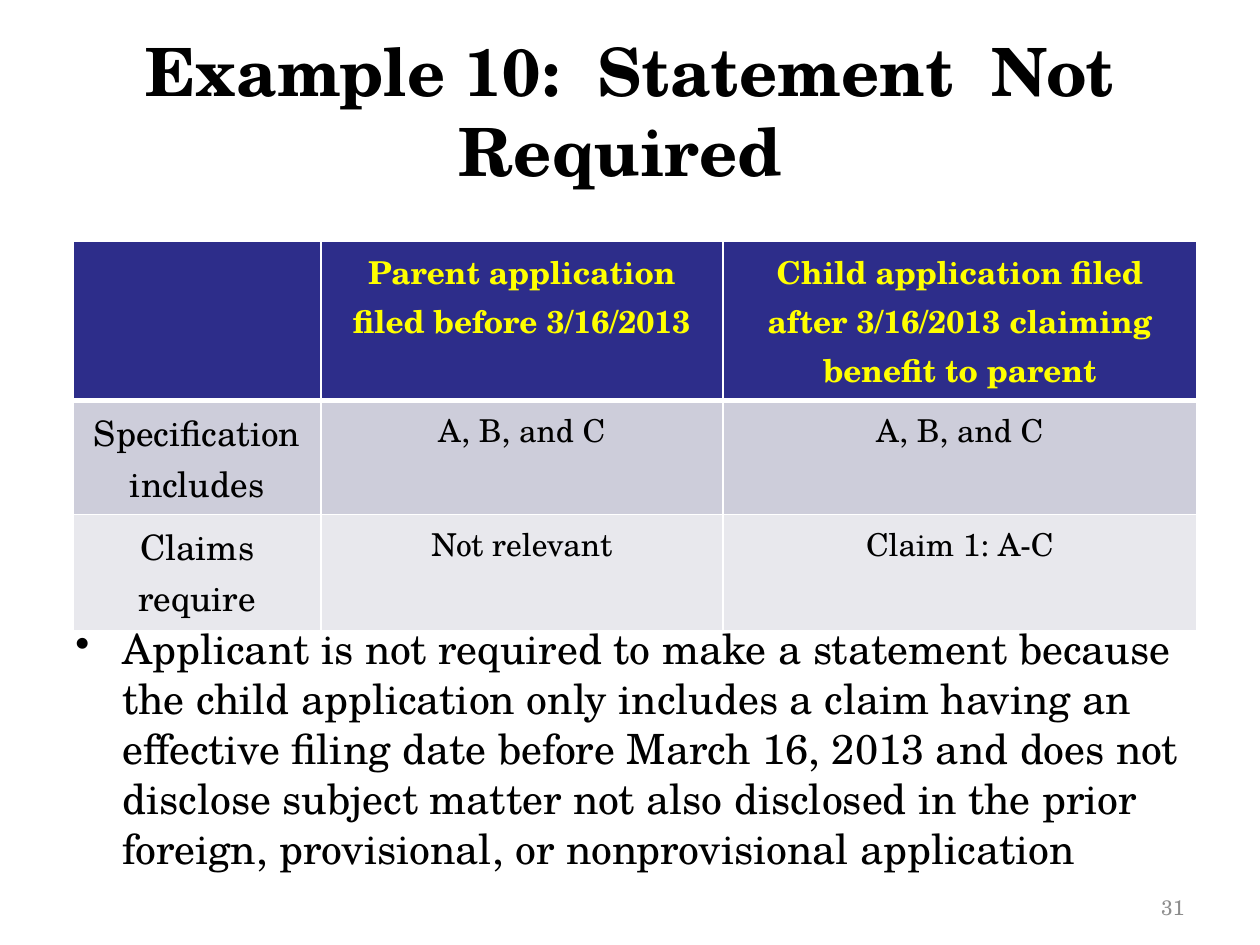
from lxml.etree import SubElement as Sub
from pptx import Presentation
from pptx.dml.color import RGBColor as Rgb
from pptx.enum.text import MSO_ANCHOR as Anchor, PP_ALIGN as Align
from pptx.oxml.ns import qn
from pptx.util import Cm, Pt

FONT = "TeX Gyre Schola"
HUES = {
    "ink": "000000",
    "page": "8C8C8C",
    "head": "2D2D8A",
    "gold": "FFFF00",
    "dark": "CDCDDA",
    "light": "E8E8ED",
    "rule": "FFFFFF",
}


def write(frame, text, size, hue="ink", bold=False, align=Align.LEFT,
          anchor=Anchor.TOP, bullet=None):
    """Fill a text frame with one formatted paragraph."""
    frame.word_wrap = True
    frame.vertical_anchor = anchor
    para = frame.paragraphs[0]
    para.alignment = align
    if bullet:
        props = para._p.get_or_add_pPr()
        props.set("marL", str(Cm(0.95)))
        props.set("indent", str(Cm(-0.95)))
        Sub(props, qn("a:buChar"), char=bullet)
    run = para.add_run()
    run.text = text
    font = run.font
    font.name, font.size, font.bold = FONT, Pt(size), bold
    font.color.rgb = Rgb.from_string(HUES[hue])


def add_text(slide, box, text, size, **look):
    frame = slide.shapes.add_textbox(*map(Cm, box)).text_frame
    write(frame, text, size, **look)


def edge(cell, base):
    """Draw white borders, with the given width in points at the bottom."""
    props = cell._tc.get_or_add_tcPr()
    for side, width in (("L", 1), ("R", 1), ("T", 1), ("B", base)):
        line = Sub(props, qn(f"a:ln{side}"), w=str(Pt(width)))
        fill = Sub(line, qn("a:solidFill"))
        Sub(fill, qn("a:srgbClr"), val=HUES["rule"])


def add_grid(slide, box, rows, widths, heights):
    shape = slide.shapes.add_table(len(rows), len(widths), *map(Cm, box))
    grid = shape.table
    for col, width in zip(grid.columns, widths):
        col.width = Cm(width)
    for row, height in zip(grid.rows, heights):
        row.height = Cm(height)
    fills = ("head", "dark", "light")
    for r, row in enumerate(rows):
        for c, text in enumerate(row):
            cell = grid.cell(r, c)
            top = r == 0
            edge(cell, 3 if top else 1)
            cell.fill.solid()
            cell.fill.fore_color.rgb = Rgb.from_string(HUES[fills[r]])
            if text:
                write(cell.text_frame, text, 18 if top or c else 20,
                      hue="gold" if top else "ink", bold=top,
                      align=Align.CENTER)


def build():
    deck = Presentation()
    deck.slide_width, deck.slide_height = Cm(25.4), Cm(19.05)
    slide = deck.slides.add_slide(deck.slide_layouts[6])

    # Point below the table
    add_text(slide, (1.27, 12.44, 22.86, 4.58),
             "Applicant is not required to make a statement because the child "
             "application only includes a claim having an effective filing "
             "date before March 16, 2013 and does not disclose subject matter "
             "not also disclosed in the prior foreign, provisional, or "
             "nonprovisional application", 23.8, bullet="•")

    # Page number
    add_text(slide, (18.2, 17.35, 5.93, 1.32), "31", 12, hue="page",
             align=Align.RIGHT, anchor=Anchor.BOTTOM)

    # Comparison of parent and child
    rows = (
        ("", "Parent application filed before 3/16/2013",
         "Child application filed after 3/16/2013 claiming benefit to parent"),
        ("Specification includes", "A, B, and C", "A, B, and C"),
        ("Claims require", "Not relevant", "Claim 1: A-C"),
    )
    add_grid(slide, (1.48, 4.87, 22.65, 7.85), rows,
             (4.99, 8.1, 9.56), (3.2, 2.3, 2.35))

    # Title
    add_text(slide, (1.27, 0.62, 22.86, 3.18),
             "Example 10:  Statement  Not Required ", 38, bold=True,
             align=Align.CENTER, anchor=Anchor.MIDDLE)

    deck.save("out.pptx")


if __name__ == "__main__":
    build()
